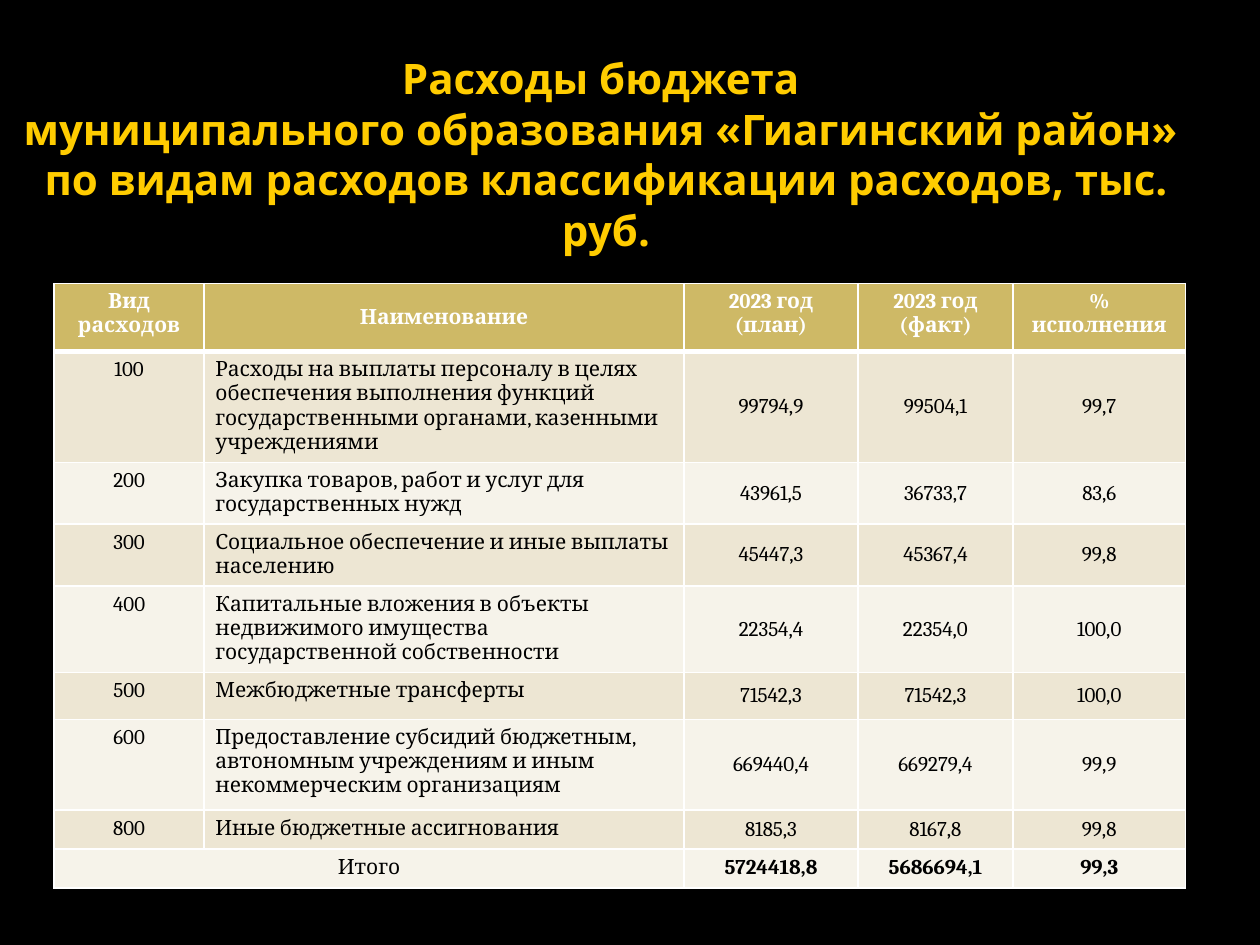
from lxml.etree import fromstring
from pptx import Presentation
from pptx.dml.color import RGBColor
from pptx.enum.text import MSO_ANCHOR, MSO_AUTO_SIZE, PP_ALIGN
from pptx.oxml.ns import nsdecls
from pptx.util import Inches, Pt

TITLE = ("Расходы бюджета \n"
         "муниципального образования «Гиагинский район» \n"
         "по видам расходов классификации расходов, тыс. руб.")
COLUMNS = [1.19, 3.81, 1.38, 1.23, 1.37]
ROW_HEIGHTS = [0.54, 0.88, 0.49, 0.49, 0.69, 0.37, 0.72, 0.31, 0.31]
ROWS = [
    ["Вид расходов", "Наименование", "2023 год\n(план)", "2023 год (факт)",
     "% исполнения"],
    ["100", "Расходы на выплаты персоналу в целях обеспечения выполнения функций "
     "государственными органами, казенными учреждениями",
     "99794,9", "99504,1", "99,7"],
    ["200", "Закупка товаров, работ и услуг для государственных нужд",
     "43961,5", "36733,7", "83,6"],
    ["300", "Социальное обеспечение и иные выплаты населению",
     "45447,3", "45367,4", "99,8"],
    ["400", "Капитальные вложения в объекты недвижимого имущества "
     "государственной собственности", "22354,4", "22354,0", "100,0"],
    ["500", "Межбюджетные трансферты", "71542,3", "71542,3", "100,0"],
    ["600", "Предоставление субсидий бюджетным, автономным учреждениям и иным "
     "некоммерческим организациям", "669440,4", "669279,4", "99,9"],
    ["800", "Иные бюджетные ассигнования", "8185,3", "8167,8", "99,8"],
    ["Итого", "", "5724418,8", "5686694,1", "99,3"],
]
HEADER, TOTAL = 0, len(ROWS) - 1


def rgb(value):
    return RGBColor.from_string(value)


def format_paragraph(p, align, color, **font):
    p.alignment = align
    p.font.color.rgb = rgb(color)
    for name, value in font.items():
        setattr(p.font, name, value)


def add_title(s):
    sp = s.shapes.title
    box = dict(left=Inches(-0.01), top=Inches(0.76),
               width=Inches(9.64), height=Inches(0.92))
    for name, value in box.items():
        setattr(sp, name, value)
    tf = sp.text_frame
    tf.word_wrap = True
    tf.auto_size = MSO_AUTO_SIZE.NONE
    tf.vertical_anchor = MSO_ANCHOR.MIDDLE
    p = tf.paragraphs[0]
    p.text = TITLE
    format_paragraph(p, PP_ALIGN.CENTER, "FFCC00",
                     name="Open Sans", size=Pt(24), bold=True)


def set_borders(cell, **widths):
    tcPr = cell._tc.get_or_add_tcPr()
    for i, side in enumerate("LRTB"):
        width = Pt(widths.get(side, 1))
        tcPr.insert(i, fromstring(
            f'<a:ln{side} {nsdecls("a")} w="{width}"><a:solidFill>'
            f'<a:srgbClr val="FFFFFF"/></a:solidFill></a:ln{side}>'))


def format_cell(cell, row, col):
    # Banded fills below a gold header
    fill = "CEB966" if row == HEADER else ("F6F3EA", "EDE6D3")[row % 2]
    cell.fill.solid()
    cell.fill.fore_color.rgb = rgb(fill)
    set_borders(cell, B=3 if row == HEADER else 1, T=3 if row == 1 else 1)

    # Figures sit in the middle of their rows, other text at the top
    if row == HEADER:
        middle = col == 1
    else:
        middle = col >= 2 and row != TOTAL
    cell.vertical_anchor = MSO_ANCHOR.MIDDLE if middle else MSO_ANCHOR.TOP
    cell.margin_left = cell.margin_right = Inches(0.09)

    is_name = col == 1 and row not in (HEADER, TOTAL)
    for p in cell.text_frame.paragraphs:
        format_paragraph(p, PP_ALIGN.LEFT if is_name else PP_ALIGN.CENTER,
                         "FFFFFF" if row == HEADER else "000000",
                         name="Cambria", size=Pt(12),
                         bold=row == HEADER or (row == TOTAL and col >= 2))


def add_expense_table(s):
    table = s.shapes.add_table(
        len(ROWS), len(COLUMNS), Inches(0.43), Inches(2.25),
        Inches(sum(COLUMNS)), Inches(sum(ROW_HEIGHTS))).table
    for column, width in zip(table.columns, COLUMNS):
        column.width = Inches(width)
    for row, height in zip(table.rows, ROW_HEIGHTS):
        row.height = Inches(height)
    for i, texts in enumerate(ROWS):
        for j, text in enumerate(texts):
            cell = table.cell(i, j)
            cell.text = text
            format_cell(cell, i, j)
    table.cell(TOTAL, 0).merge(table.cell(TOTAL, 1))


def main():
    prs = Presentation()
    prs.slide_width, prs.slide_height = Inches(10), Inches(7.5)
    s = prs.slides.add_slide(prs.slide_layouts[5])
    s.background.fill.solid()
    s.background.fill.fore_color.rgb = rgb("000000")
    add_title(s)
    add_expense_table(s)
    prs.save("out.pptx")


if __name__ == "__main__":
    main()
